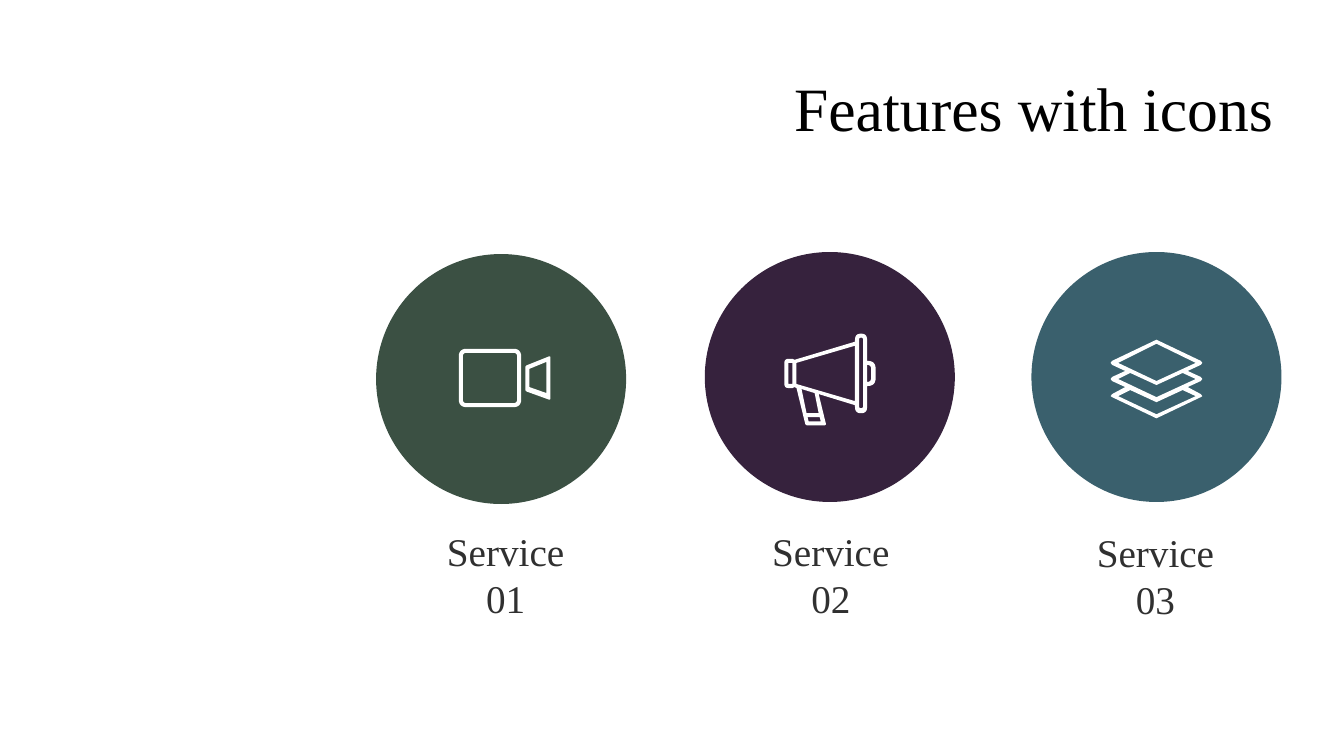
from math import hypot
from typing import NamedTuple

from pptx import Presentation
from pptx.dml.color import RGBColor
from pptx.enum.shapes import MSO_SHAPE
from pptx.enum.text import PP_ALIGN
from pptx.util import Inches, Pt

OVAL = MSO_SHAPE.OVAL
CENTER, RIGHT = PP_ALIGN.CENTER, PP_ALIGN.RIGHT
FONT = "Times New Roman"
CELL = Inches(0.01)  # the slide is a grid of 1333 columns by 750 rows
COLS, ROWS = 1333, 750
DISC = 248
STEPS = 6


class Knot(NamedTuple):
    """A corner of an outline; bend is how far its rounding reaches."""
    x: float
    y: float
    bend: float = 0


Ring = list[Knot]


class Icon(NamedTuple):
    col: int
    row: int
    rings: list[Ring]


class Label(NamedTuple):
    text: str
    col: int
    row: int
    wide: int
    high: int
    size: int
    color: str
    align: PP_ALIGN
    inset: int


class Service(NamedTuple):
    col: int
    row: int
    color: str
    icon: Icon
    label: Label


def cells(count: float) -> int:
    return round(count * CELL)


def paint(target, color: str) -> None:
    target.fill.solid()
    target.fill.fore_color.rgb = RGBColor.from_string(color)


def ring(*knots: tuple) -> Ring:
    return [Knot(*knot) for knot in knots]


def block(left: float, top: float, right: float, bottom: float, bend: float = 0) -> Ring:
    return ring((left, top, bend), (right, top, bend), (right, bottom, bend), (left, bottom, bend))


def toward(start: Knot, goal: Knot, reach: float) -> tuple[float, float]:
    """Point at the given distance from start on the way to goal."""
    part = reach / hypot(goal.x - start.x, goal.y - start.y)
    return start.x + (goal.x - start.x) * part, start.y + (goal.y - start.y) * part


def trace(knots: Ring) -> list[tuple[float, float]]:
    """Turn knots into plain points, with each bend as a short curve."""
    points = []
    for i, knot in enumerate(knots):
        if not knot.bend:
            points.append((knot.x, knot.y))
            continue
        ax, ay = toward(knot, knots[i - 1], knot.bend)
        bx, by = toward(knot, knots[(i + 1) % len(knots)], knot.bend)
        for step in range(STEPS + 1):
            t = step / STEPS
            u = 1 - t
            points.append((u * u * ax + 2 * u * t * knot.x + t * t * bx,
                           u * u * ay + 2 * u * t * knot.y + t * t * by))
    return points


def draw_icon(shapes, icon: Icon) -> None:
    pen = None
    for knots in icon.rings:
        first, *rest = [(cells(icon.col + x), cells(icon.row + y)) for x, y in trace(knots)]
        if pen is None:
            pen = shapes.build_freeform(*first)
        else:
            pen.move_to(*first)
        pen.add_line_segments(rest, close=True)
    shape = pen.convert_to_shape()
    shape.shadow.inherit = False
    paint(shape, "FFFFFF")
    shape.line.fill.background()


def draw_disc(shapes, service: Service) -> None:
    disc = shapes.add_shape(OVAL, cells(service.col), cells(service.row), cells(DISC), cells(DISC))
    disc.shadow.inherit = False
    paint(disc, service.color)
    disc.line.fill.background()


def draw_label(shapes, label: Label) -> None:
    box = shapes.add_textbox(cells(label.col), cells(label.row), cells(label.wide), cells(label.high))
    frame = box.text_frame
    frame.word_wrap = True
    frame.margin_top = cells(label.inset)
    para = frame.paragraphs[0]
    para.alignment = label.align
    para.line_spacing = Pt(label.size * 1.2)
    run = para.add_run()
    run.text = label.text
    run.font.name = FONT
    run.font.size = Pt(label.size)
    run.font.color.rgb = RGBColor.from_string(label.color)


def caption(text: str, col: int, row: int, wide: int) -> Label:
    return Label(text, col, row, wide, 57, 28, "303030", CENTER, 8)


def sheet(drop: int) -> Ring:
    """The visible part of a lower layer."""
    return ring((45, 57 + drop), (7, 39 + drop), (19, 33 + drop), (45, 45 + drop),
                (71, 33 + drop), (84, 39 + drop))


EDGE = [(45, 0), (89, 21), (90.5, 23), (89, 25), (76, 31), (89, 37), (90.5, 39), (89, 41),
        (76, 47), (89, 54), (90.5, 56), (89, 57), (45, 78)]
MIRROR = [(90 - x, y) for x, y in EDGE[-2:0:-1]]

CAMERA = Icon(455, 346, [
    block(0, 0, 62, 58, 8),
    block(4, 4, 58, 54, 4),
    ring((66, 17, 2), (91, 7, 2), (91, 51, 2), (66, 42, 2)),
    ring((70, 20), (87, 13), (87, 44), (70, 38)),
])
HORN = Icon(778, 331, [
    ring((82, 0, 6), (82, 27), (90.5, 27, 8), (90.5, 52, 8), (82, 52), (82, 79, 6), (70, 79, 6),
         (70, 71), (34, 60), (41.5, 91, 2), (21, 91, 2), (12, 54), (10, 53), (8, 54),
         (0, 54, 4), (0, 25, 4), (8, 25), (10, 26), (70, 8), (70, 0, 6)),
    ring((82, 31), (86, 31, 4), (86, 48, 4), (82, 48)),
    block(74, 4, 78, 74, 2),
    ring((70, 12), (12, 29), (12, 50), (70, 67)),
    ring((17, 55), (30, 59), (34, 79), (22, 79)),
    ring((23, 83), (35, 83), (36, 87), (24, 87)),
    block(4, 29, 8, 50),
])
LAYERS = Icon(1102, 337, [
    ring(*EDGE, *MIRROR),
    ring((7, 23), (45, 4), (84, 23), (45, 41)),
    sheet(0),
    sheet(17),
])
SERVICES = [
    Service(373, 252, "3B5043", CAMERA, caption("Service 01", 420, 515, 163)),
    Service(699, 250, "36223D", HORN, caption("Service 02", 740, 515, 168)),
    Service(1023, 250, "3A606D", LAYERS, caption("Service 03", 1064, 516, 164)),
]
TITLE = Label("Features with icons", 328, 60, 945, 84, 44, "000000", RIGHT, 9)


def main() -> None:
    deck = Presentation()
    deck.slide_width, deck.slide_height = cells(COLS), cells(ROWS)
    slide = deck.slides.add_slide(deck.slide_layouts[6])
    paint(slide.background, "FFFFFF")
    for service in SERVICES:
        draw_disc(slide.shapes, service)
        draw_icon(slide.shapes, service.icon)
        draw_label(slide.shapes, service.label)
    draw_label(slide.shapes, TITLE)
    deck.save("out.pptx")


if __name__ == "__main__":
    main()
